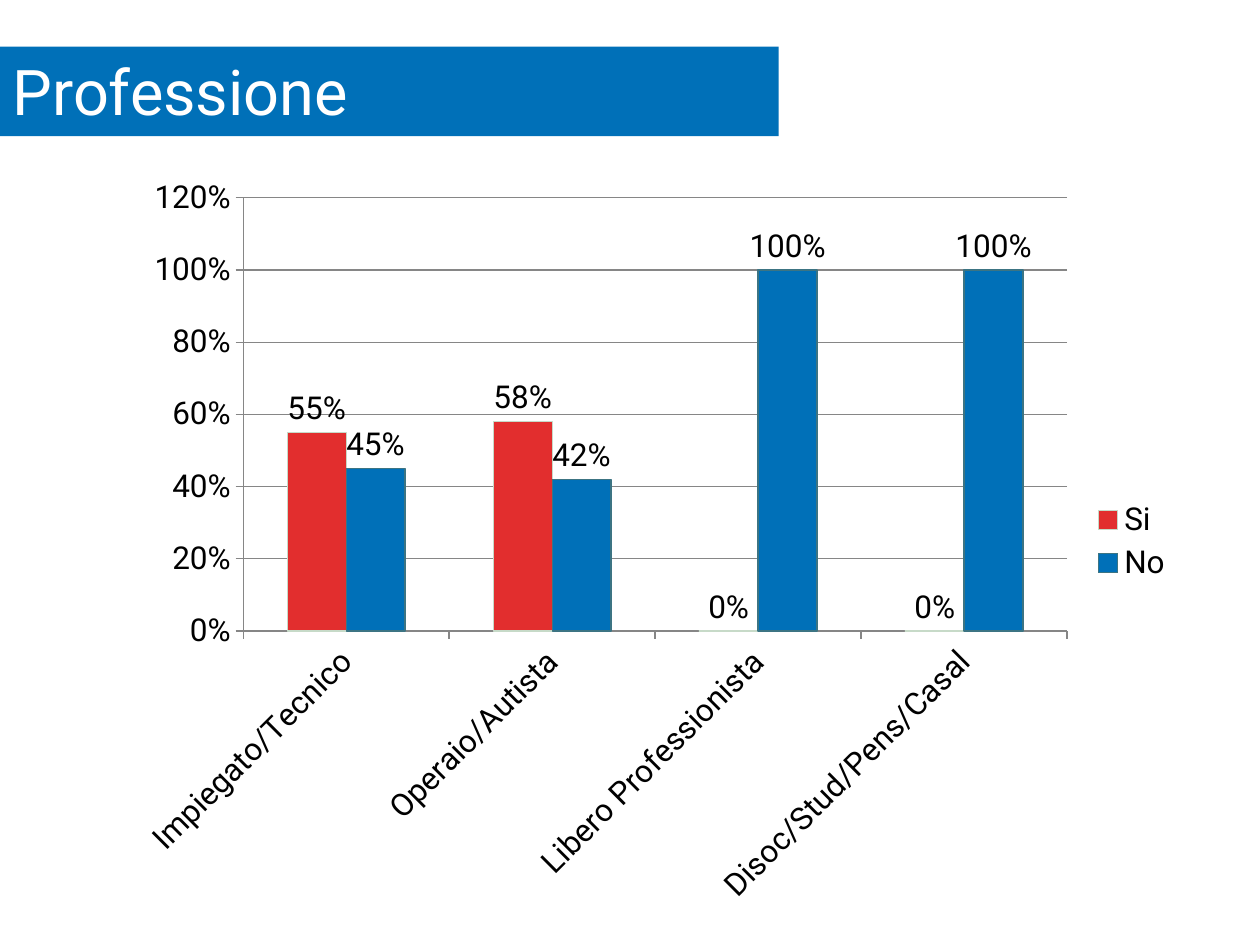
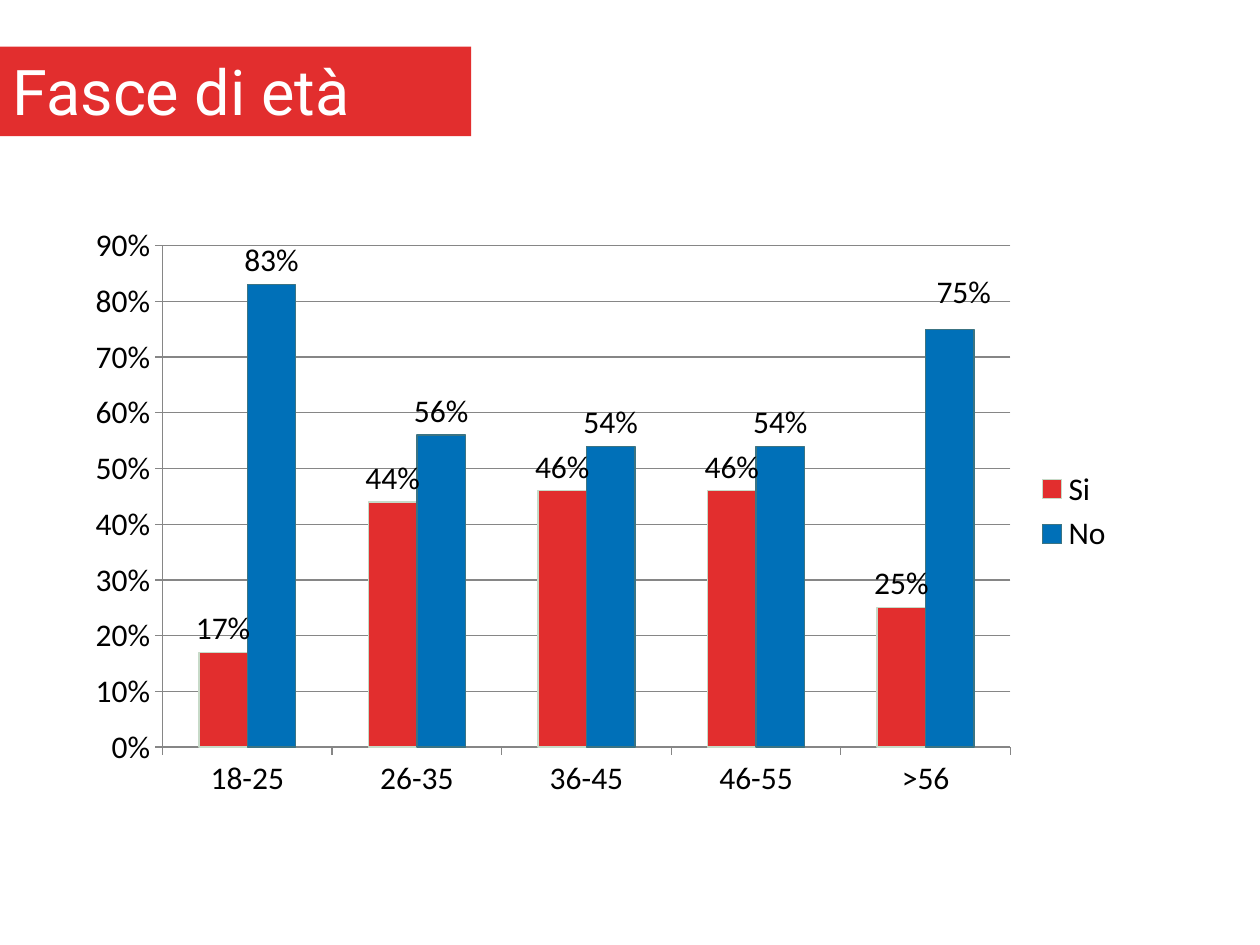
from dataclasses import dataclass

from pptx import Presentation
from pptx import util as u
from pptx.chart.data import CategoryChartData
from pptx.dml.color import RGBColor
from pptx.enum import chart as ch, text
from pptx.oxml import parse_xml
from pptx.oxml.ns import nsdecls, qn

PX = 9144  # EMU, 100 px to the inch
TITLE_ONLY = 5
PERCENT = "0%"
NO_LEADER_LINES = (
    f"<c:extLst {nsdecls('c')}>"
    '<c:ext uri="{CE6537A1-D6FC-4f65-9D91-7224C49458BB}"'
    ' xmlns:c15="http://schemas.microsoft.com/office/drawing/2012/chart">'
    '<c15:showLeaderLines val="0"/></c:ext></c:extLst>'
)


@dataclass(frozen=True)
class Theme:
    red: RGBColor = RGBColor.from_string("E22E2E")
    blue: RGBColor = RGBColor.from_string("0070B8")
    red_edge: RGBColor = RGBColor.from_string("C7DAC8")
    blue_edge: RGBColor = RGBColor.from_string("3C7483")
    white: RGBColor = RGBColor.from_string("FFFFFF")
    black: RGBColor = RGBColor.from_string("000000")
    axis: RGBColor = RGBColor.from_string("868686")
    title_font: str = "Roboto"
    title_size: u.Pt = u.Pt(36)
    chart_size: u.Pt = u.Pt(18)
    hairline: u.Pt = u.Pt(0.75)


THEME = Theme()
ANSWER_STYLES = {"Si": (THEME.red, THEME.red_edge), "No": (THEME.blue, THEME.blue_edge)}


@dataclass(frozen=True)
class Box:
    left: int
    top: int
    width: int
    height: int

    def emu(self) -> tuple[int, int, int, int]:
        return self.left * PX, self.top * PX, self.width * PX, self.height * PX


@dataclass(frozen=True)
class LabelShift:
    answer: str
    category: int
    right: int
    down: int


@dataclass(frozen=True)
class Survey:
    title: str
    band_color: RGBColor
    band_width: int
    frame: Box
    plot: Box
    font: str
    groups: tuple[str, ...]
    answers: dict[str, tuple[float, ...]]
    top_value: float
    step: float
    group_angle: int = 0
    label_shifts: tuple[LabelShift, ...] = ()


SURVEYS = (
    Survey(
        "Professione", THEME.blue, 618,
        Box(98, 131, 843, 598), Box(193, 157, 654, 344), "Roboto",
        ("Impiegato/Tecnico", "Operaio/Autista", "Libero Professionista", "Disoc/Stud/Pens/Casal"),
        {"Si": (0.55, 0.58, 0, 0), "No": (0.45, 0.42, 1, 1)},
        top_value=1.2, step=0.2, group_angle=-45,
    ),
    Survey(
        "Fasce di età", THEME.red, 374,
        Box(59, 170, 835, 472), Box(129, 195, 673, 398), "Calibri",
        ("18-25", "26-35", "36-45", "46-55", ">56"),
        {"Si": (0.17, 0.44, 0.46, 0.46, 0.25), "No": (0.83, 0.56, 0.54, 0.54, 0.75)},
        top_value=0.9, step=0.1, label_shifts=(LabelShift("No", 4, 11, -10),),
    ),
)


def add_title(slide, survey: Survey) -> None:
    band = slide.shapes.title
    band.left, band.top, band.width, band.height = Box(0, 37, survey.band_width, 71).emu()
    band.fill.solid()
    band.fill.fore_color.rgb = survey.band_color
    frame = band.text_frame
    frame.word_wrap = True
    frame.auto_size = text.MSO_AUTO_SIZE.NONE
    frame.vertical_anchor = text.MSO_ANCHOR.TOP
    paragraph = frame.paragraphs[0]
    paragraph.alignment = text.PP_ALIGN.LEFT
    run = paragraph.add_run()
    run.text = survey.title
    run.font.name, run.font.size = THEME.title_font, THEME.title_size
    run.font.color.rgb = THEME.white


def manual_layout(settings: dict[str, str | float]):
    """Return a chart layout element whose settings keep the given order."""
    items = "".join(f'<c:{name} val="{value}"/>' for name, value in settings.items())
    return parse_xml(f"<c:layout {nsdecls('c')}><c:manualLayout>{items}</c:manualLayout></c:layout>")


def place_plot(chart, survey: Survey) -> None:
    frame, plot = survey.frame, survey.plot
    area = chart.plots[0]._element.getparent()
    for layout in area.findall(qn("c:layout")):
        area.remove(layout)
    area.insert(0, manual_layout({
        "layoutTarget": "inner", "xMode": "edge", "yMode": "edge",
        "x": (plot.left - frame.left) / frame.width,
        "y": (plot.top - frame.top) / frame.height,
        "w": plot.width / frame.width,
        "h": plot.height / frame.height,
    }))


def style_axes(chart, survey: Survey) -> None:
    values, groups = chart.value_axis, chart.category_axis
    values.minimum_scale, values.maximum_scale = 0, survey.top_value
    values.major_unit = survey.step
    values.has_major_gridlines = True
    values.tick_labels.number_format = PERCENT
    values.tick_labels.number_format_is_linked = False
    for axis in (values, groups):
        axis.major_tick_mark = ch.XL_TICK_MARK.OUTSIDE
        axis.minor_tick_mark = ch.XL_TICK_MARK.NONE
    for line in (values.format.line, groups.format.line, values.major_gridlines.format.line):
        line.color.rgb, line.width = THEME.axis, THEME.hairline
    style_font(groups.tick_labels.font, survey)
    body = groups._element.find(f"{qn('c:txPr')}/{qn('a:bodyPr')}")
    body.set("rot", str(survey.group_angle * 60000))
    body.set("vert", "horz")


def style_font(font, survey: Survey) -> None:
    font.name, font.size, font.bold = survey.font, THEME.chart_size, False
    font.color.rgb = THEME.black


def style_answer(series, survey: Survey) -> None:
    fill, edge = ANSWER_STYLES[series.name]
    series.invert_if_negative = False
    series.format.fill.solid()
    series.format.fill.fore_color.rgb = fill
    series.format.line.color.rgb, series.format.line.width = edge, THEME.hairline
    labels = series.data_labels
    labels.show_value = True
    labels.number_format, labels.number_format_is_linked = PERCENT, False
    labels.position = ch.XL_LABEL_POSITION.OUTSIDE_END
    style_font(labels.font, survey)
    for shift in survey.label_shifts:
        if shift.answer == series.name:
            shift_label(series, shift, survey)
    hide_leader_lines(series)


def shift_label(series, shift: LabelShift, survey: Survey) -> None:
    label = series.points[shift.category].data_label
    style_font(label.font, survey)
    label.position = ch.XL_LABEL_POSITION.OUTSIDE_END
    element = series._element.find(f"{qn('c:dLbls')}/{qn('c:dLbl')}")
    element.insert(1, manual_layout({
        "x": shift.right / survey.frame.width,
        "y": shift.down / survey.frame.height,
    }))


def hide_leader_lines(series) -> None:
    labels = series._element.find(qn("c:dLbls"))
    for setting in labels.findall(qn("c:showLeaderLines")):
        setting.set("val", "0")
    labels.append(parse_xml(NO_LEADER_LINES))


def add_survey_chart(slide, survey: Survey) -> None:
    data = CategoryChartData(number_format=PERCENT)
    data.categories = survey.groups
    for answer, shares in survey.answers.items():
        data.add_series(answer, shares)
    chart = slide.shapes.add_chart(
        ch.XL_CHART_TYPE.COLUMN_CLUSTERED, *survey.frame.emu(), data
    ).chart
    style_font(chart.font, survey)
    chart.has_title = False
    chart.has_legend = True
    chart.legend.position = ch.XL_LEGEND_POSITION.RIGHT
    chart.legend.include_in_layout = False
    columns = chart.plots[0]
    columns.gap_width, columns.vary_by_categories = 150, False
    for series in columns.series:
        style_answer(series, survey)
    style_axes(chart, survey)
    place_plot(chart, survey)


def main() -> None:
    deck = Presentation()
    deck.slide_width, deck.slide_height = 1000 * PX, 750 * PX
    for survey in SURVEYS:
        slide = deck.slides.add_slide(deck.slide_layouts[TITLE_ONLY])
        add_title(slide, survey)
        add_survey_chart(slide, survey)
    deck.save("out.pptx")


if __name__ == "__main__":
    main()
